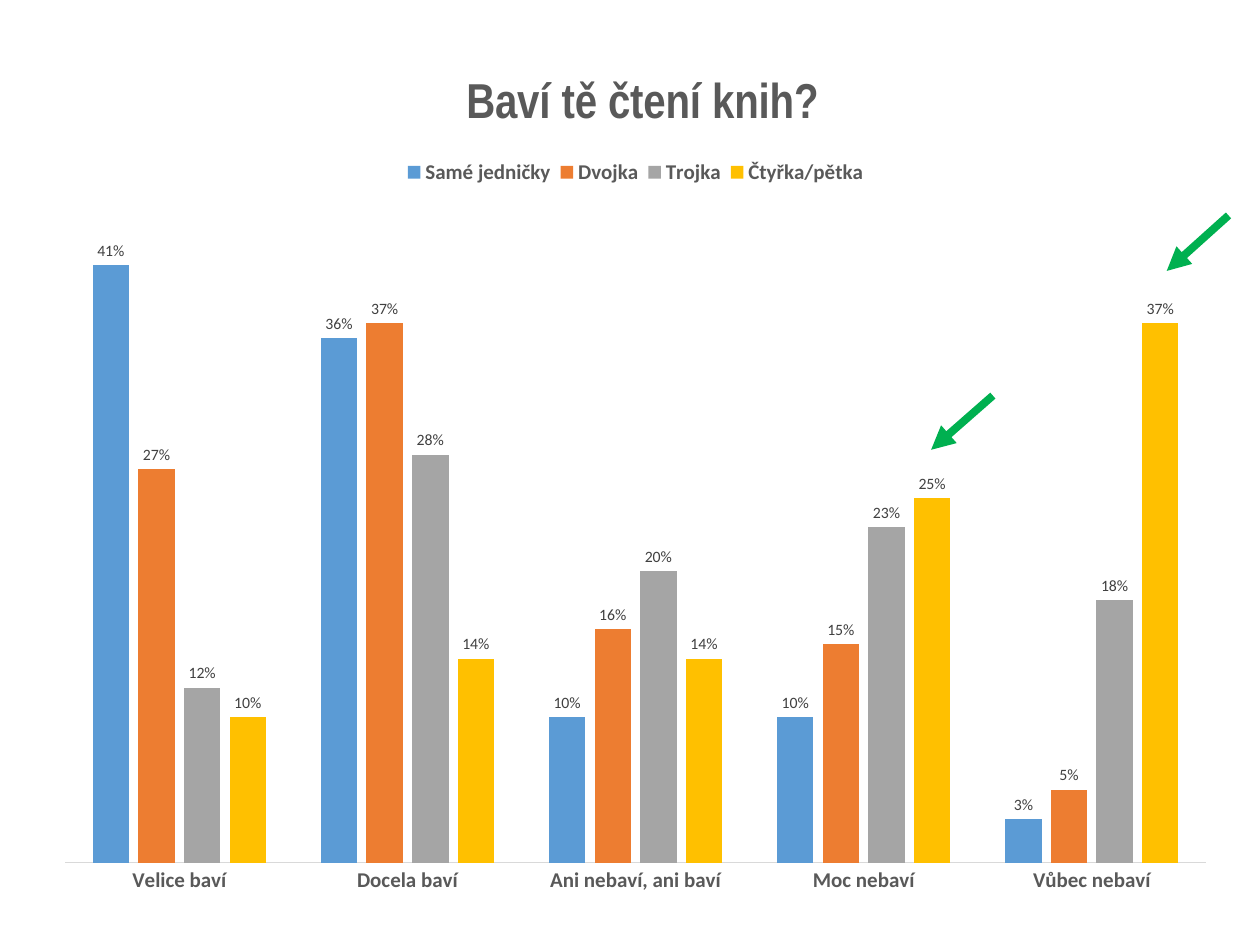
"""Build a slide with a clustered column chart about reading and two marker arrows."""
from lxml.etree import SubElement
from pptx import Presentation
from pptx.chart.data import CategoryChartData
from pptx.dml.color import RGBColor
from pptx.enum.chart import XL_CHART_TYPE, XL_LABEL_POSITION, XL_LEGEND_POSITION, XL_TICK_MARK
from pptx.enum.shapes import MSO_CONNECTOR
from pptx.oxml import parse_xml
from pptx.oxml.ns import nsdecls, qn
from pptx.util import Inches, Pt

BLUE = RGBColor(0x5B, 0x9B, 0xD5)
ORANGE = RGBColor(0xED, 0x7D, 0x31)
GRAY = RGBColor(0xA5, 0xA5, 0xA5)
YELLOW = RGBColor(0xFF, 0xC0, 0x00)
GREEN = RGBColor(0x00, 0xB0, 0x50)
TEXT = RGBColor(0x59, 0x59, 0x59)
LABEL = RGBColor(0x40, 0x40, 0x40)
AXIS = RGBColor(0xD9, 0xD9, 0xD9)

ANSWERS = ["Velice baví", "Docela baví", "Ani nebaví, ani baví", "Moc nebaví", "Vůbec nebaví"]
GRADES = [
    ("Samé jedničky", BLUE, [0.41, 0.36, 0.10, 0.10, 0.03]),
    ("Dvojka", ORANGE, [0.27, 0.37, 0.16, 0.15, 0.05]),
    ("Trojka", GRAY, [0.12, 0.28, 0.20, 0.23, 0.18]),
    ("Čtyřka/pětka", YELLOW, [0.10, 0.14, 0.14, 0.25, 0.37]),
]
ARROWS = [((9.75, 1.71), (9.26, 2.15)), ((7.88, 3.14), (7.39, 3.57))]


class SlideBuilder:
    """Hold the style and the current slide."""

    body_font = "Calibri"
    title_font = "Arial Narrow"

    def __init__(self, deck):
        self.page = deck.slides.add_slide(deck.slide_layouts[6])

    def style(self, font, size, color, bold=False, name=None):
        """Apply size, colour, weight and typeface to a font."""
        font.name = name or self.body_font
        font.size = Pt(size)
        font.bold = bold
        font.color.rgb = color

    def layout(self, element, **fractions):
        """Fix the place of a chart part as fractions of the chart."""
        for old in element.findall(qn("c:layout")):
            element.remove(old)
        modes = [("layoutTarget", "inner")] if element.tag == qn("c:plotArea") else []
        modes += [("xMode", "edge"), ("yMode", "edge")]
        entries = "".join(f'<c:{key} val="{value}"/>' for key, value in modes + list(fractions.items()))
        layout = parse_xml(
            f'<c:layout {nsdecls("c")}><c:manualLayout>{entries}</c:manualLayout></c:layout>'
        )
        before = {qn("c:tx"), qn("c:legendPos")}
        element.insert(sum(child.tag in before for child in element), layout)

    def column_chart(self, title, categories, series, left, top, width, height):
        """Add a clustered column chart with labelled columns."""
        data = CategoryChartData(number_format="0%")
        data.categories = categories
        for name, _, values in series:
            data.add_series(name, values)
        chart = self.page.shapes.add_chart(
            XL_CHART_TYPE.COLUMN_CLUSTERED,
            Inches(left), Inches(top), Inches(width), Inches(height), data,
        ).chart
        self.style(chart.font, 10, TEXT)

        chart.has_title = True
        para = chart.chart_title.text_frame.paragraphs[0]
        para.text = title
        self.style(para.font, 28, TEXT, True, self.title_font)
        chart.chart_title.include_in_layout = False

        chart.has_legend = True
        chart.legend.position = XL_LEGEND_POSITION.TOP
        chart.legend.include_in_layout = False
        self.style(chart.legend.font, 12, TEXT, True)

        value_axis = chart.value_axis
        value_axis.minimum_scale, value_axis.maximum_scale = 0, 0.45
        value_axis.has_major_gridlines = False
        value_axis.visible = False
        category_axis = chart.category_axis
        category_axis.major_tick_mark = XL_TICK_MARK.NONE
        category_axis.format.line.color.rgb = AXIS
        category_axis.format.line.width = Pt(0.75)
        self.style(category_axis.tick_labels.font, 12, TEXT, True)

        plot = chart.plots[0]
        plot.gap_width, plot.overlap = 150, -25
        plot.vary_by_categories = False
        for columns, (_, color, _) in zip(plot.series, series):
            columns.format.fill.solid()
            columns.format.fill.fore_color.rgb = color
            labels = columns.data_labels
            labels.show_value = True
            labels.number_format = "0%"
            labels.number_format_is_linked = False
            labels.position = XL_LABEL_POSITION.OUTSIDE_END
            self.style(labels.font, 9, LABEL)
        return chart

    def arrow(self, start, end):
        """Add a thick green arrow from start to end."""
        points = [Inches(value) for value in (*start, *end)]
        connector = self.page.shapes.add_connector(MSO_CONNECTOR.STRAIGHT, *points)
        connector.line.color.rgb = GREEN
        connector.line.width = Pt(4.5)
        SubElement(connector.line._get_or_add_ln(), qn("a:tailEnd"), type="triangle")
        SubElement(connector._element.spPr, qn("a:effectLst"))


def main():
    """Build and save the deck."""
    deck = Presentation()
    deck.slide_width, deck.slide_height = Inches(10), Inches(7.5)
    builder = SlideBuilder(deck)
    chart = builder.column_chart("Baví tě čtení knih?", ANSWERS, GRADES, 0.33, 0.34, 9.43, 6.85)
    builder.layout(chart.chart_title._element, x=0.35, y=0.03)
    builder.layout(chart.legend._element, x=0.3, y=0.13, w=0.4, h=0.04)
    builder.layout(chart._chartSpace.chart.plotArea, x=0.02, y=0.19, w=0.96, h=0.76)
    for start, end in ARROWS:
        builder.arrow(start, end)
    deck.save("out.pptx")


if __name__ == "__main__":
    main()
